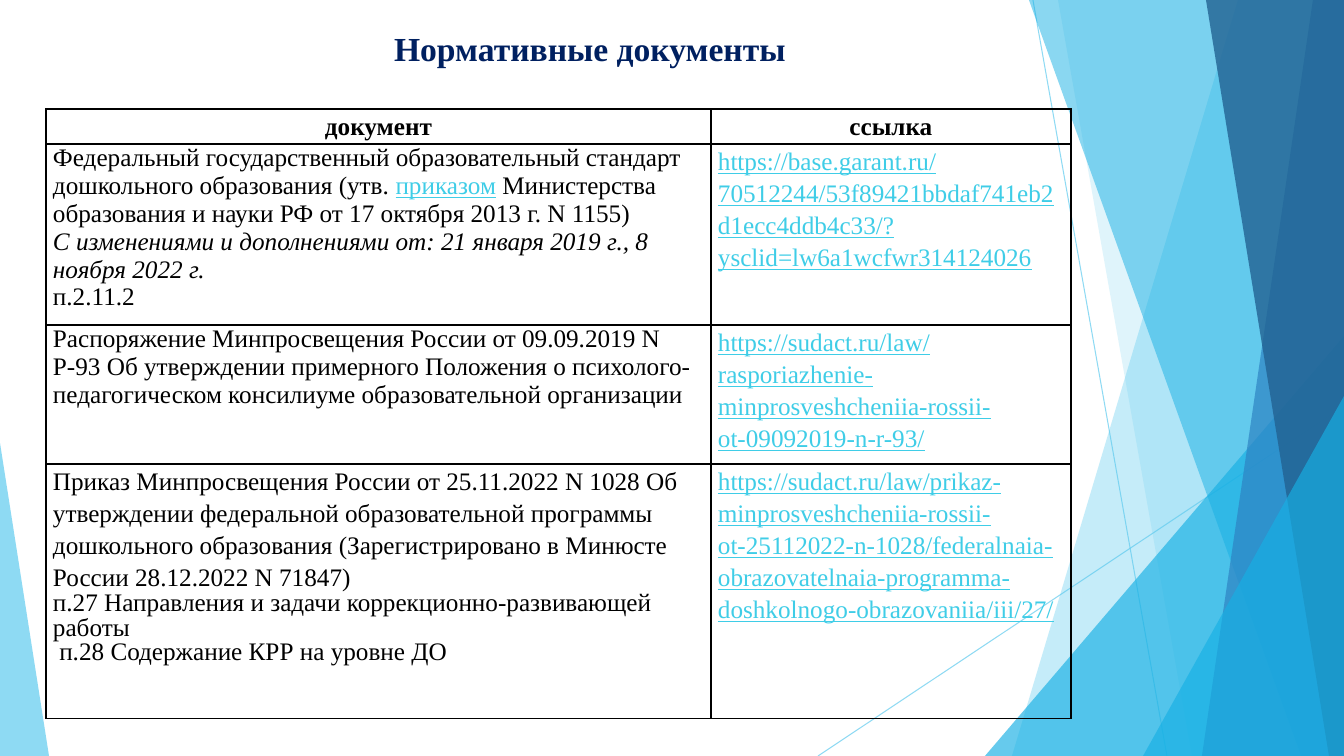
from dataclasses import dataclass

from lxml import etree
from pptx import Presentation
from pptx import util as u
from pptx.dml import color
from pptx.enum import shapes, text
from pptx.oxml import ns


@dataclass(frozen=True)
class Theme:
    font: str = "Times New Roman"
    title_size: int = 24
    body_size: int = 18
    title: str = "002060"
    ink: str = "000000"
    link: str = "3FCDE7"
    sky: str = "5FCBEF"
    cyan: str = "17B0E4"
    blue: str = "2E83C3"
    navy: str = "226292"


THEME = Theme()
PX = 914400 / 100.8
WIDTH, HEIGHT = 1344, 756
WIDE, SINGLE, TIGHT = 1.15, 1.0, u.Pt(17.6)

TITLE = "Нормативные документы"
TITLE_BOX = (384, 23, 424, 50)

RAYS = [((1033, 0), (1167, HEIGHT)), ((WIDTH, 406), (818, HEIGHT))]
RAY_OPACITY = 70

# kind, geometry, colour, opacity
FACETS = [
    ("band", (1238, 1012), THEME.sky, 36),
    ("band", (1058, 1192), THEME.sky, 20),
    ("corner", (985, 336, 359, 420, 1), THEME.cyan, 66),
    ("band", (1029, 1301), THEME.cyan, 50),
    ("band", (1313, 1202), THEME.blue, 70),
    ("band", (1206, 1329), THEME.navy, 80),
    ("corner", (1143, 396, 201, 360, 1), THEME.cyan, 66),
    ("corner", (0, 443, 49, 313, 0), THEME.sky, 70),
]

TABLE_ORIGIN = (46, 109)
COLUMNS = [665, 360]
ROWS = [35, 181, 139, 255]
CELL_MARGIN = 7

CENTER, LEFT, JUSTIFY = text.PP_ALIGN.CENTER, text.PP_ALIGN.LEFT, text.PP_ALIGN.JUSTIFY


def heading(words):
    return [(CENTER, WIDE, [(words, "bold")])]


def address(words):
    return [(JUSTIFY, WIDE, [(words, "link")])]


TABLE = [
    [heading("документ"), heading("ссылка")],
    [
        [
            (LEFT, SINGLE, [
                ("Федеральный государственный образовательный стандарт дошкольного образования (утв. ", ""),
                ("приказом", "link"),
                (" Министерства образования и науки РФ от 17 октября 2013 г. N 1155)", ""),
            ]),
            (LEFT, SINGLE, [("С изменениями и дополнениями от: 21 января 2019 г., 8 ноября 2022 г.", "italic")]),
            (LEFT, SINGLE, [("п.2.11.2", "")]),
        ],
        address("https://base.garant.ru/70512244/53f89421bbdaf741eb2d1ecc4ddb4c33/?ysclid=lw6a1wcfwr314124026"),
    ],
    [
        [(LEFT, SINGLE, [(
            "Распоряжение Минпросвещения России от 09.09.2019 N Р-93 Об утверждении примерного "
            "Положения о психолого-педагогическом консилиуме образовательной организации", "")])],
        address("https://sudact.ru/law/rasporiazhenie-minprosveshcheniia-rossii-ot-09092019-n-r-93/"),
    ],
    [
        [
            (LEFT, WIDE, [(
                "Приказ Минпросвещения России от 25.11.2022 N 1028 Об утверждении федеральной "
                "образовательной программы дошкольного образования (Зарегистрировано в Минюсте "
                "России 28.12.2022 N 71847)", "")]),
            (LEFT, TIGHT, [("п.27 Направления и задачи коррекционно-развивающей работы", "")]),
            (LEFT, TIGHT, [(" п.28 Содержание КРР на уровне ДО", "")]),
        ],
        address("https://sudact.ru/law/prikaz-minprosveshcheniia-rossii-ot-25112022-n-1028/"
                "federalnaia-obrazovatelnaia-programma-doshkolnogo-obrazovaniia/iii/27/"),
    ],
]


def emu(*lengths):
    return [u.Emu(round(length * PX)) for length in lengths]


def rgb(code):
    return color.RGBColor.from_string(code)


def set_opacity(element, percent):
    for tint in element.spPr.iter(ns.qn("a:srgbClr")):
        etree.SubElement(tint, ns.qn("a:alpha"), val=str(percent * 1000))


def add_ray(page, start, end):
    ray = page.shapes.add_connector(shapes.MSO_CONNECTOR.STRAIGHT, *emu(*start, *end))
    ray.line.color.rgb = rgb(THEME.sky)
    ray.line.width = u.Pt(0.75)
    set_opacity(ray._element, RAY_OPACITY)
    etree.SubElement(ray._element.spPr, ns.qn("a:effectLst"))


def add_facet(page, kind, geometry, tint, opacity):
    if kind == "band":
        top, bottom = geometry
        builder = page.shapes.build_freeform(*emu(top, 0), scale=1.0)
        corners = [(WIDTH, 0), (WIDTH, HEIGHT), (bottom, HEIGHT)]
        builder.add_line_segments([emu(*corner) for corner in corners], close=True)
        facet = builder.convert_to_shape()
    else:
        *place, apex = geometry
        facet = page.shapes.add_shape(shapes.MSO_SHAPE.ISOSCELES_TRIANGLE, *emu(*place))
        facet.adjustments[0] = apex
    facet.shadow.inherit = False
    facet.fill.solid()
    facet.fill.fore_color.rgb = rgb(tint)
    facet.line.fill.background()
    set_opacity(facet._element, opacity)


def style(span, size, tint, bold=False, italic=False, underline=False):
    font = span.font
    font.name, font.size, font.color.rgb = THEME.font, u.Pt(size), rgb(tint)
    font.bold, font.italic, font.underline = bold, italic, underline


def add_title(page):
    box = page.shapes.title
    box.left, box.top, box.width, box.height = emu(*TITLE_BOX)
    frame = box.text_frame
    frame.text = TITLE
    frame.word_wrap = False
    frame.auto_size = text.MSO_AUTO_SIZE.NONE
    frame.vertical_anchor = text.MSO_ANCHOR.TOP
    para = frame.paragraphs[0]
    para.alignment = LEFT
    style(para.runs[0], THEME.title_size, THEME.title, bold=True)


def add_borders(cell):
    properties = cell._tc.get_or_add_tcPr()
    for index, side in enumerate(("lnL", "lnR", "lnT", "lnB")):
        border = etree.Element(ns.qn("a:" + side), w=str(u.Pt(1)))
        fill = etree.SubElement(border, ns.qn("a:solidFill"))
        etree.SubElement(fill, ns.qn("a:srgbClr"), val=THEME.ink)
        properties.insert(index, border)


def fill_cell(cell, paragraphs):
    cell.margin_left, cell.margin_right = emu(CELL_MARGIN, CELL_MARGIN)
    cell.margin_top = cell.margin_bottom = 0
    cell.fill.background()
    add_borders(cell)
    frame = cell.text_frame
    for index, (alignment, spacing, spans) in enumerate(paragraphs):
        para = frame.add_paragraph() if index else frame.paragraphs[0]
        para.alignment, para.line_spacing = alignment, spacing
        for words, look in spans:
            span = para.add_run()
            span.text = words
            tint = THEME.link if look == "link" else THEME.ink
            style(span, THEME.body_size, tint, look == "bold", look == "italic", look == "link")


def add_documents(page):
    place = emu(*TABLE_ORIGIN, sum(COLUMNS), sum(ROWS))
    table = page.shapes.add_table(len(ROWS), len(COLUMNS), *place).table
    table.first_row = table.horz_banding = False
    for column, width in zip(table.columns, emu(*COLUMNS)):
        column.width = width
    for row, height, contents in zip(table.rows, emu(*ROWS), TABLE):
        row.height = height
        for cell, paragraphs in zip(row.cells, contents):
            fill_cell(cell, paragraphs)


def main():
    deck = Presentation()
    deck.slide_width, deck.slide_height = emu(WIDTH, HEIGHT)
    page = deck.slides.add_slide(deck.slide_layouts[5])
    for ray in RAYS:
        add_ray(page, *ray)
    for facet in FACETS:
        add_facet(page, *facet)
    add_title(page)
    add_documents(page)
    deck.save("out.pptx")


if __name__ == "__main__":
    main()
